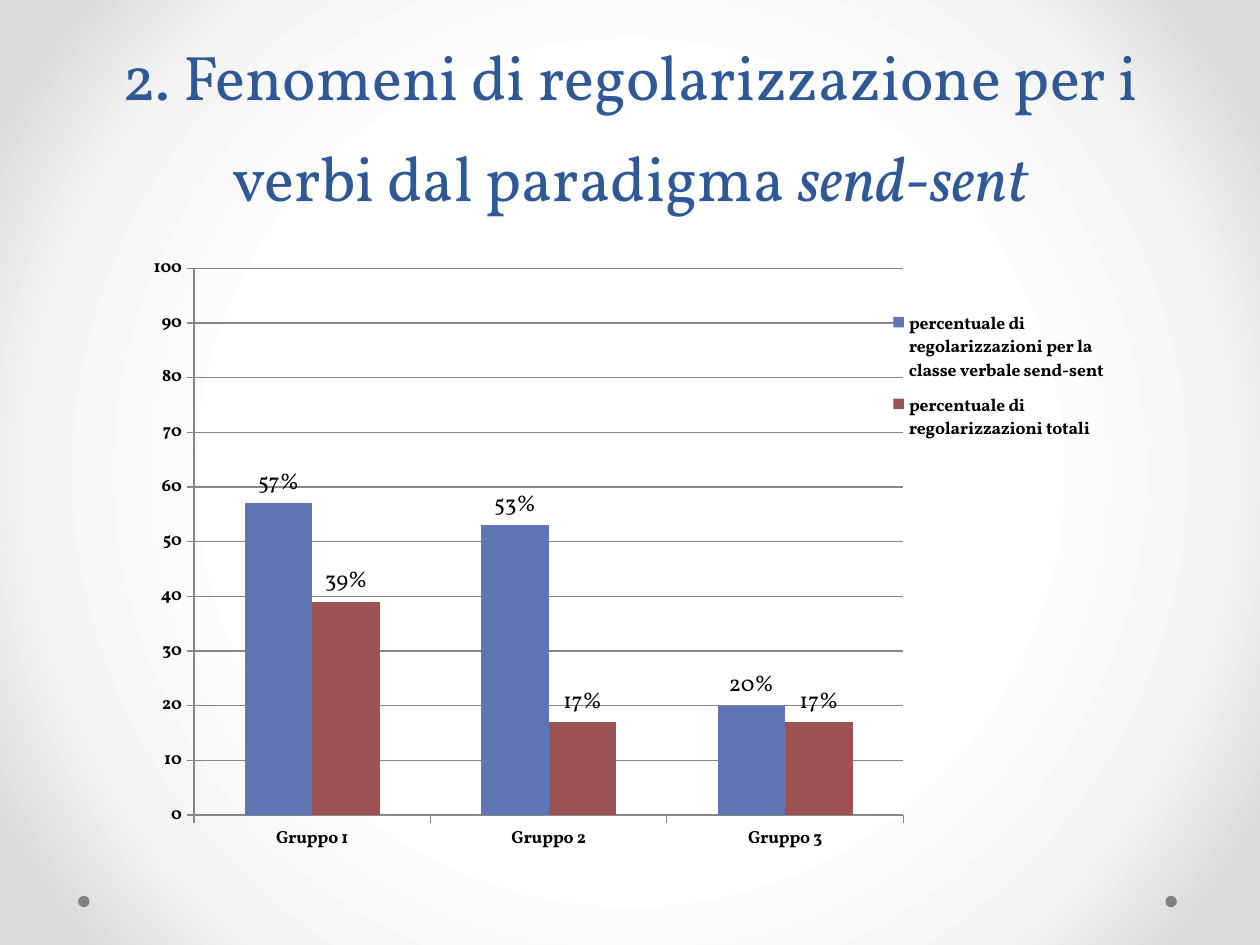
from lxml import etree
from pptx import Presentation
from pptx.chart.data import CategoryChartData
from pptx.dml.color import RGBColor
from pptx.enum.chart import XL_CHART_TYPE, XL_LABEL_POSITION, XL_LEGEND_POSITION, XL_TICK_MARK
from pptx.enum.shapes import MSO_SHAPE
from pptx.enum.text import MSO_ANCHOR, PP_ALIGN
from pptx.oxml import parse_xml
from pptx.oxml.ns import qn
from pptx.util import Inches, Pt

CLUSTERED = XL_CHART_TYPE.COLUMN_CLUSTERED
OUTSIDE_END = XL_LABEL_POSITION.OUTSIDE_END
LEGEND_RIGHT = XL_LEGEND_POSITION.RIGHT
TICK_OUT = XL_TICK_MARK.OUTSIDE
OVAL = MSO_SHAPE.OVAL
BOTTOM = MSO_ANCHOR.BOTTOM
CENTER = PP_ALIGN.CENTER

FONT = "Vollkorn"
DRAWING_NS = "http://schemas.openxmlformats.org/drawingml/2006/main"
GRADIENT_STOPS = [(50, "FFFFFF"), (76, "F4F4F4"), (92, "DADADA")]
CHART_BOX = (1.06, 1.94, 8.11, 4.92)
PLOT_BOX = (1.54, 2.13, 5.63, 4.34)
LEGEND_BOX = (7, 2.4, 1.85, 1.2)
GROUPS = ["Gruppo 1", "Gruppo 2", "Gruppo 3"]
SERIES = [
    ("percentuale di regolarizzazioni per la classe verbale send-sent", [57, 53, 20], "6076B4"),
    ("percentuale di regolarizzazioni totali", [39, 17, 17], "9C5252"),
]


def color(hex_text):
    return RGBColor.from_string(hex_text)


def set_font(font, size, hex_text, bold=False):
    font.name = FONT
    font.size = Pt(size)
    font.bold = bold
    font.color.rgb = color(hex_text)


def paint_background(page):
    """Fill the page with a gradient that spreads in circles from its centre."""
    fill = page.background.fill
    fill.solid()
    solid = page.background._cSld.bg.bgPr.find(qn("a:solidFill"))
    stops = "".join(
        f'<a:gs pos="{place * 1000}"><a:srgbClr val="{hex_text}"/></a:gs>'
        for place, hex_text in GRADIENT_STOPS
    )
    gradient = parse_xml(
        f'<a:gradFill xmlns:a="{DRAWING_NS}" rotWithShape="1"><a:gsLst>{stops}</a:gsLst>'
        '<a:path path="circle"><a:fillToRect l="50000" t="50000" r="50000" b="50000"/></a:path>'
        "</a:gradFill>"
    )
    solid.getparent().replace(solid, gradient)


def add_dot(page, left):
    dot = page.shapes.add_shape(OVAL, Inches(left), Inches(7.11), Inches(0.09), Inches(0.09))
    dot.shadow.inherit = False
    dot.fill.solid()
    dot.fill.fore_color.rgb = color("808080")
    dot.line.fill.background()


def write_title(page):
    title = page.shapes.title
    title.left, title.top = Inches(0.5), Inches(0)
    title.width, title.height = Inches(9), Inches(1.75)
    frame = title.text_frame
    frame.word_wrap = True
    frame.vertical_anchor = BOTTOM
    para = frame.paragraphs[0]
    para.alignment = CENTER
    para.line_spacing = Pt(58)
    set_font(para.font, 36, "2F5897")
    para.add_run().text = "2. Fenomeni di regolarizzazione per i verbi dal paradigma "
    verb = para.add_run()
    verb.text = "send-sent"
    verb.font.italic = True


def place_in_chart(parent, index, box, inner=False):
    """Give a chart part a fixed place; box is in inches on the page."""
    for old in parent.findall(qn("c:layout")):
        parent.remove(old)
    layout = etree.Element(qn("c:layout"))
    manual = etree.SubElement(layout, qn("c:manualLayout"))
    left, top, width, height = CHART_BOX
    settings = [("layoutTarget", "inner")] if inner else []
    settings += [
        ("xMode", "edge"),
        ("yMode", "edge"),
        ("x", (box[0] - left) / width),
        ("y", (box[1] - top) / height),
        ("w", box[2] / width),
        ("h", box[3] / height),
    ]
    for name, value in settings:
        etree.SubElement(manual, qn(f"c:{name}")).set("val", str(value))
    parent.insert(index, layout)


def style_axis(axis):
    axis.major_tick_mark = TICK_OUT
    axis.format.line.color.rgb = color("868686")
    set_font(axis.tick_labels.font, 10, "000000", bold=True)


def style_series(series, hex_text):
    series.format.fill.solid()
    series.format.fill.fore_color.rgb = color(hex_text)
    labels = series.data_labels
    labels.show_value = True
    labels.position = OUTSIDE_END
    labels.number_format = '0"%"'
    labels.number_format_is_linked = False
    set_font(labels.font, 13, "000000")


def add_group_chart(page):
    data = CategoryChartData()
    data.categories = GROUPS
    for name, values, _ in SERIES:
        data.add_series(name, values)
    box = [Inches(length) for length in CHART_BOX]
    chart = page.shapes.add_chart(CLUSTERED, *box, data).chart
    chart.has_title = False
    set_font(chart.font, 10, "000000", bold=True)

    plot = chart.plots[0]
    plot.gap_width = 150
    plot.overlap = 0
    plot.vary_by_categories = False
    for series, (_, _, hex_text) in zip(plot.series, SERIES):
        style_series(series, hex_text)

    style_axis(chart.category_axis)
    scale = chart.value_axis
    style_axis(scale)
    scale.minimum_scale, scale.maximum_scale, scale.major_unit = 0, 100, 10
    scale.has_major_gridlines = True
    scale.major_gridlines.format.line.color.rgb = color("868686")

    chart.has_legend = True
    legend = chart.legend
    legend.position = LEGEND_RIGHT
    legend.include_in_layout = False
    set_font(legend.font, 10, "000000", bold=True)

    plot_area = chart._chartSpace.chart.plotArea
    place_in_chart(plot_area, 0, PLOT_BOX, inner=True)
    place_in_chart(legend._element, 1, LEGEND_BOX)


def main():
    deck = Presentation()
    deck.slide_width, deck.slide_height = Inches(10), Inches(7.5)
    page = deck.slides.add_slide(deck.slide_layouts.get_by_name("Title Only"))
    paint_background(page)
    for left in (9.25, 0.62):
        add_dot(page, left)
    write_title(page)
    add_group_chart(page)
    deck.save("out.pptx")


if __name__ == "__main__":
    main()
